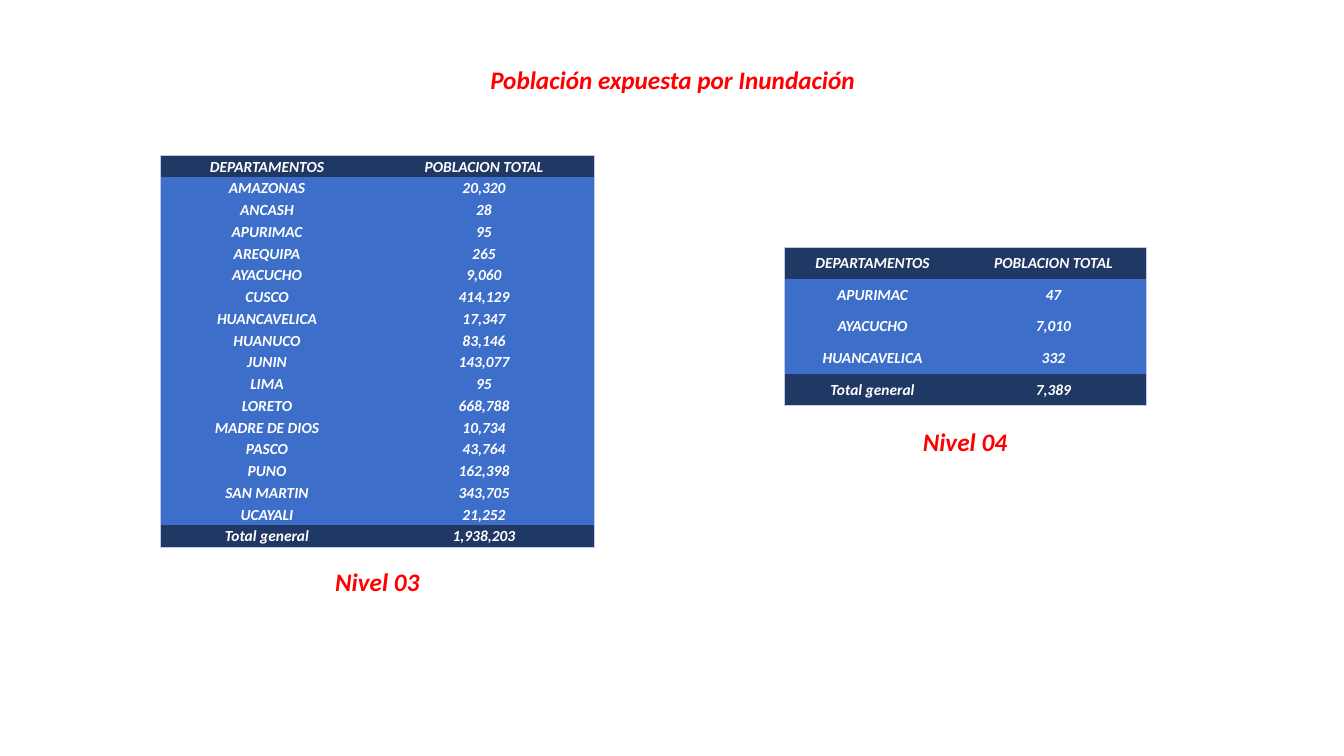
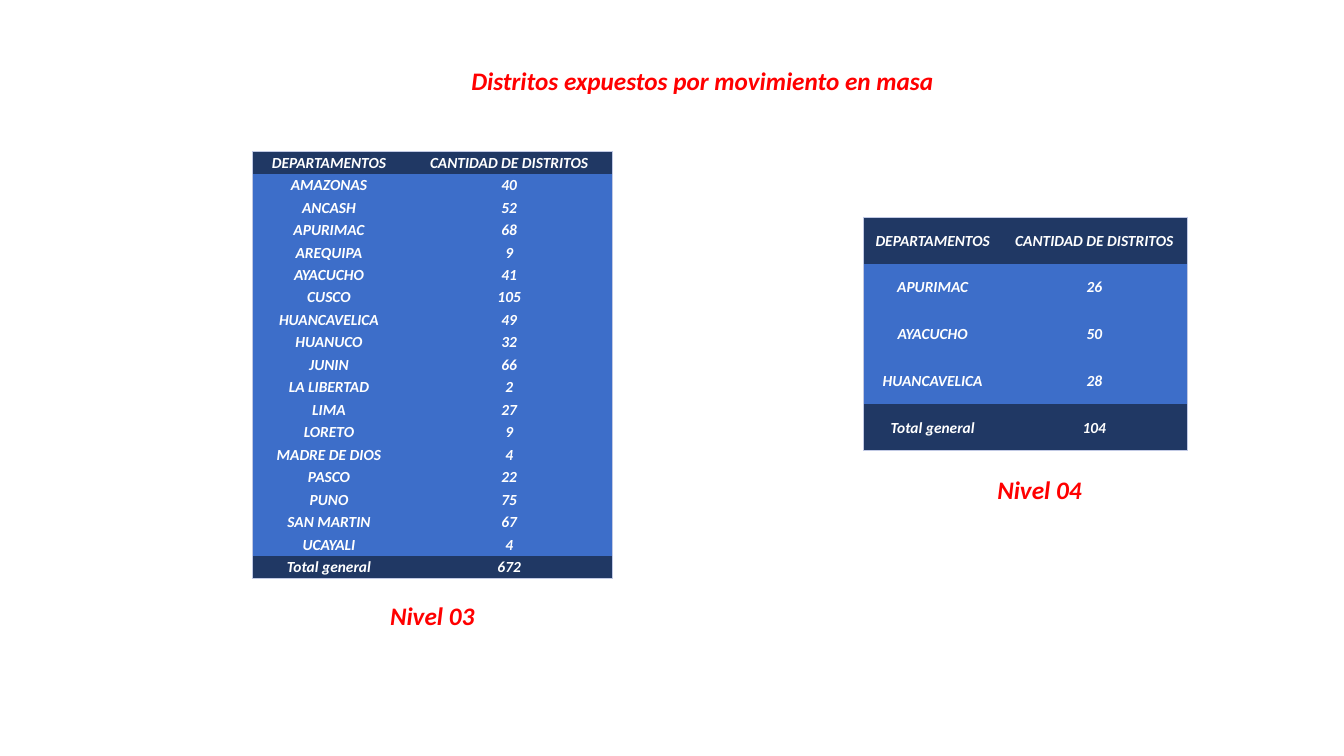
from dataclasses import dataclass

from lxml.etree import SubElement
from pptx import Presentation
from pptx.dml.color import RGBColor
from pptx.enum.text import MSO_ANCHOR, MSO_AUTO_SIZE, PP_ALIGN
from pptx.oxml.ns import qn
from pptx.util import Pt


@dataclass(frozen=True)
class Theme:
    """Colours, type sizes and measures shared by the slides."""
    font: str = "Calibri"
    heading: str = "FF0000"
    light: str = "FFFFFF"
    band: str = "203864"
    body: str = "3D6EC9"
    edge: str = "C1C9E4"
    heading_size: float = 18
    cell_size: float = 11
    heading_height: float = 29
    label_width: float = 120
    cell_inset: float = 0.7
    edge_width: float = 0.5
    table_style: str = "{2D5ABB26-0587-4C30-8999-92F81FD0307C}"


class Report:
    """Builds the slides of the report in one style."""

    def __init__(self, theme):
        """Start an empty widescreen deck."""
        self.theme = theme
        self.deck = Presentation()
        self.deck.slide_width, self.deck.slide_height = Pt(960), Pt(540)
        self.page = None

    def add_line(self, frame, text, size, colour):
        """Fill a text frame with one centred bold italic line."""
        para = frame.paragraphs[0]
        para.alignment = PP_ALIGN.CENTER
        span = para.add_run()
        span.text = text
        formats = {"name": self.theme.font, "size": Pt(size), "bold": True, "italic": True}
        for name, value in formats.items():
            setattr(span.font, name, value)
        span.font.color.rgb = RGBColor.from_string(colour)

    def add_heading(self, box, text, wrap):
        """Put a red heading into a box that grows with it."""
        formats = {"word_wrap": wrap, "auto_size": MSO_AUTO_SIZE.SHAPE_TO_FIT_TEXT,
                   "vertical_anchor": MSO_ANCHOR.TOP}
        for name, value in formats.items():
            setattr(box.text_frame, name, value)
        self.add_line(box.text_frame, text, self.theme.heading_size, self.theme.heading)

    def add_page(self, title, left, top, width):
        """Add a slide and place its title."""
        self.page = self.deck.slides.add_slide(self.deck.slide_layouts[5])
        box = self.page.shapes.title
        place = {"left": left, "top": top, "width": width, "height": self.theme.heading_height}
        for name, value in place.items():
            setattr(box, name, Pt(value))
        self.add_heading(box, title, False)

    def add_label(self, text, centre, top):
        """Add a level label around a centre line."""
        width = self.theme.label_width
        box = self.page.shapes.add_textbox(
            Pt(centre - width / 2), Pt(top), Pt(width), Pt(self.theme.heading_height))
        self.add_heading(box, text, True)

    def add_edges(self, cell, sides):
        """Draw the given sides of a cell, hiding the others."""
        properties = cell._tc.get_or_add_tcPr()
        for index, side in enumerate("LRTB"):
            line = SubElement(properties, qn(f"a:ln{side}"), w=str(Pt(self.theme.edge_width)))
            if side in sides:
                fill = SubElement(line, qn("a:solidFill"))
                SubElement(fill, qn("a:srgbClr"), val=self.theme.edge)
            else:
                SubElement(line, qn("a:noFill"))
            properties.insert(index, line)

    def style_cell(self, cell, text, fill, sides):
        """Letter, fill and outline one table cell."""
        inset = Pt(self.theme.cell_inset)
        formats = {"margin_left": inset, "margin_right": inset, "margin_top": inset,
                   "margin_bottom": 0, "vertical_anchor": MSO_ANCHOR.MIDDLE}
        for name, value in formats.items():
            setattr(cell, name, value)
        cell.fill.solid()
        cell.fill.fore_color.rgb = RGBColor.from_string(fill)
        self.add_line(cell.text_frame, text, self.theme.cell_size, self.theme.light)
        self.add_edges(cell, sides)

    def add_level(self, label, header, records, total, left, top, widths, height,
                  gap, shift=0):
        """Add a table of departments with its level label below."""
        rows = [("DEPARTAMENTOS", header), *records, ("Total general", total)]
        last = len(rows) - 1
        table = self.page.shapes.add_table(
            len(rows), 2, Pt(left), Pt(top), Pt(sum(widths)), Pt(height)).table
        table.horz_banding = False
        table._tbl.tblPr.find(qn("a:tableStyleId")).text = self.theme.table_style
        for column, width in zip(table.columns, widths):
            column.width = Pt(width)
        for index, texts in enumerate(rows):
            table.rows[index].height = Pt(height / len(rows))
            ends = {0: "T", last: "B"}.get(index, "")
            fill = self.theme.band if ends else self.theme.body
            for column, (text, side) in enumerate(zip(texts, "LR")):
                self.style_cell(table.cell(index, column), text, fill, side + ends)
        self.add_label(label, left + sum(widths) / 2 + shift, top + height + gap)


FLOOD_LEVEL_3 = [
    ("AMAZONAS", "20,320"), ("ANCASH", "28"), ("APURIMAC", "95"), ("AREQUIPA", "265"),
    ("AYACUCHO", "9,060"), ("CUSCO", "414,129"), ("HUANCAVELICA", "17,347"),
    ("HUANUCO", "83,146"), ("JUNIN", "143,077"), ("LIMA", "95"), ("LORETO", "668,788"),
    ("MADRE DE DIOS", "10,734"), ("PASCO", "43,764"), ("PUNO", "162,398"),
    ("SAN MARTIN", "343,705"), ("UCAYALI", "21,252"),
]
FLOOD_LEVEL_4 = [("APURIMAC", "47"), ("AYACUCHO", "7,010"), ("HUANCAVELICA", "332")]
LANDSLIDE_LEVEL_3 = [
    ("AMAZONAS", "40"), ("ANCASH", "52"), ("APURIMAC", "68"), ("AREQUIPA", "9"),
    ("AYACUCHO", "41"), ("CUSCO", "105"), ("HUANCAVELICA", "49"), ("HUANUCO", "32"),
    ("JUNIN", "66"), ("LA LIBERTAD", "2"), ("LIMA", "27"), ("LORETO", "9"),
    ("MADRE DE DIOS", "4"), ("PASCO", "22"), ("PUNO", "75"), ("SAN MARTIN", "67"),
    ("UCAYALI", "4"),
]
LANDSLIDE_LEVEL_4 = [("APURIMAC", "26"), ("AYACUCHO", "50"), ("HUANCAVELICA", "28")]


def main():
    """Build and save the two slides."""
    report = Report(Theme())

    report.add_page("Población expuesta por Inundación", 342, 42, 277)
    people = "POBLACION TOTAL"
    report.add_level("Nivel 03", people, FLOOD_LEVEL_3, "1,938,203",
                     left=114.5, top=111, widths=(152.5, 157.5), height=280, gap=10)
    report.add_level("Nivel 04", people, FLOOD_LEVEL_4, "7,389",
                     left=560, top=176.5, widths=(126.5, 132), height=113, gap=11.5)

    report.add_page("Distritos expuestos por movimiento en masa", 327.5, 43, 348.5)
    districts = "CANTIDAD DE DISTRITOS"
    report.add_level("Nivel 03", districts, LANDSLIDE_LEVEL_3, "672",
                     left=180, top=108, widths=(110, 147.5), height=305, gap=12.5)
    report.add_level("Nivel 04", districts, LANDSLIDE_LEVEL_4, "104",
                     left=617, top=155, widths=(98.5, 132.5), height=167, gap=13.5, shift=10)

    report.deck.save("out.pptx")


if __name__ == "__main__":
    main()
